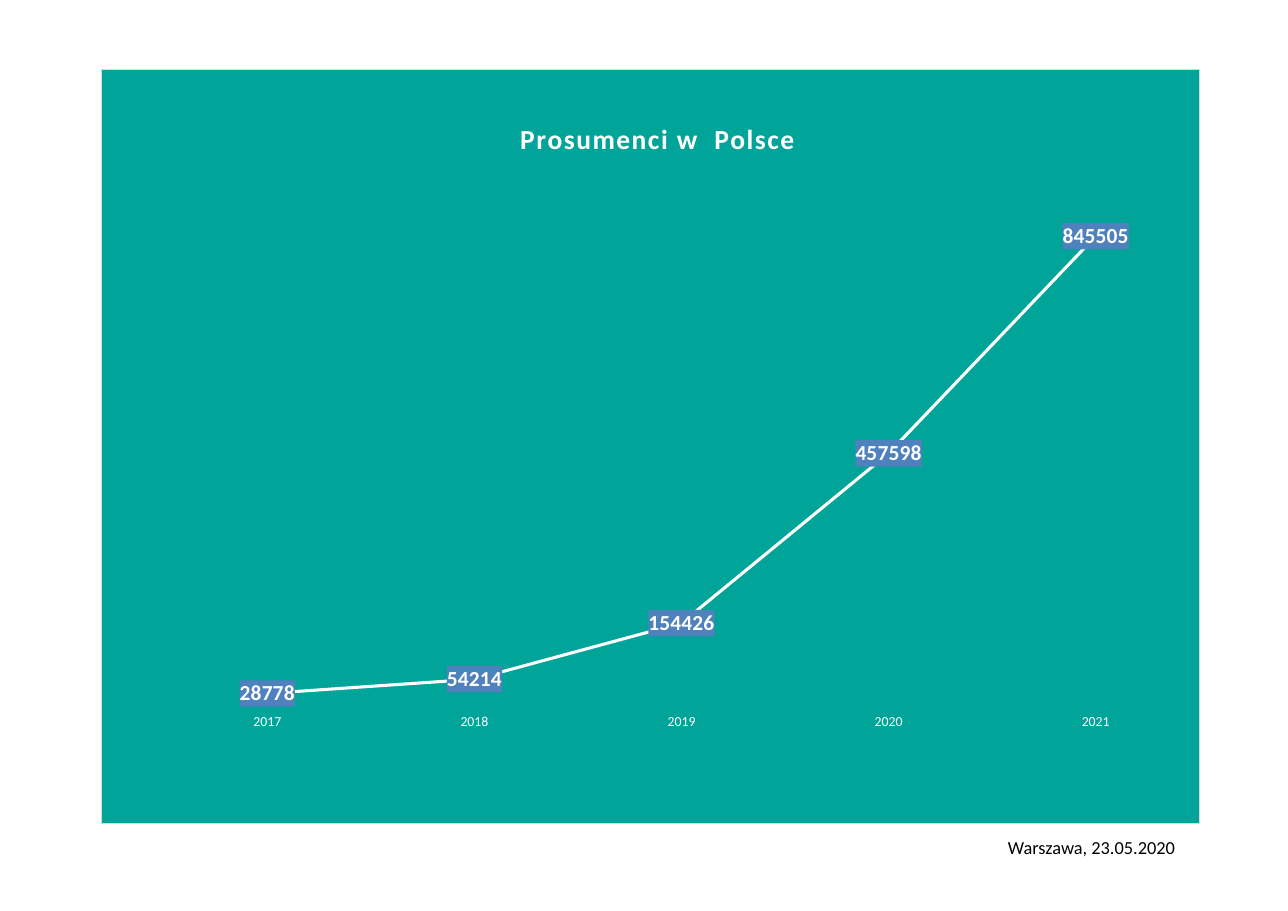
import dataclasses

import pptx
import pptx.chart.data
import pptx.dml.color
import pptx.enum.chart
import pptx.enum.text
import pptx.oxml
import pptx.oxml.ns
import pptx.util

Cm = pptx.util.Cm
Pt = pptx.util.Pt
RGB = pptx.dml.color.RGBColor

WHITE = RGB(0xFF, 0xFF, 0xFF)
BLACK = RGB(0, 0, 0)
TEAL = RGB(0x00, 0xA4, 0x99)
BLUE = RGB(0x4F, 0x81, 0xBD)
GREY = RGB(0xD9, 0xD9, 0xD9)
FACE = "Calibri"


@dataclasses.dataclass(frozen=True)
class Count:
    year: str
    total: int


COUNTS = [
    Count("2017", 28778),
    Count("2018", 54214),
    Count("2019", 154426),
    Count("2020", 457598),
    Count("2021", 845505),
]


def style(font, size: float, color: RGB, bold: bool = False) -> None:
    font.name = FACE
    font.size = Pt(size)
    font.bold = bold
    font.color.rgb = color


def fill(color: RGB, edge: str = "<a:ln><a:noFill/></a:ln>"):
    names = pptx.oxml.ns.nsdecls("c", "a")
    return pptx.oxml.parse_xml(
        f'<c:spPr {names}><a:solidFill><a:srgbClr val="{color}"/>'
        f"</a:solidFill>{edge}</c:spPr>"
    )


def place(target: str = "", **spots: float):
    names = pptx.oxml.ns.nsdecls("c")
    modes = "".join(f'<c:{key}Mode val="edge"/>' for key in "xy")
    sizes = "".join(f'<c:{key} val="{val}"/>' for key, val in spots.items())
    return pptx.oxml.parse_xml(
        f"<c:layout {names}><c:manualLayout>{target}{modes}{sizes}"
        "</c:manualLayout></c:layout>"
    )


def add_title(chart) -> None:
    frame = chart.chart_title.text_frame
    frame.text = "Prosumenci w  Polsce"
    style(frame.paragraphs[0].font, 18, WHITE, True)
    root = chart.element
    root.xpath("c:chart/c:title//a:defRPr")[0].set("spc", "100")
    title = root.xpath("c:chart/c:title")[0]
    for old in title.xpath("c:layout"):
        title.remove(old)
    title.xpath("c:tx")[0].addnext(place(x=0.377, y=0.06))


def add_line(chart) -> None:
    line = chart.plots[0].series[0]
    line.smooth = False
    line.format.line.color.rgb = WHITE
    line.format.line.width = Pt(2)
    line.marker.style = pptx.enum.chart.XL_MARKER_STYLE.NONE
    labels = line.data_labels
    labels.show_value = True
    labels.position = pptx.enum.chart.XL_LABEL_POSITION.CENTER
    style(labels.font, 14, WHITE, True)
    chart.element.xpath(".//c:ser/c:dLbls/c:txPr")[0].addprevious(fill(BLUE))


def set_axes(chart) -> None:
    years = chart.category_axis
    years.major_tick_mark = pptx.enum.chart.XL_TICK_MARK.NONE
    years.has_major_gridlines = False
    years.format.line.fill.background()
    style(years.tick_labels.font, 9, WHITE)
    scale = chart.value_axis
    scale.minimum_scale = 0
    scale.maximum_scale = 900000
    scale.has_major_gridlines = False
    scale.visible = False


def add_chart(slide) -> None:
    data = pptx.chart.data.CategoryChartData()
    data.categories = [count.year for count in COUNTS]
    data.add_series("Prosumenci", [count.total for count in COUNTS])
    chart = slide.shapes.add_chart(
        pptx.enum.chart.XL_CHART_TYPE.LINE,
        Cm(2.32), Cm(1.58), Cm(25.35), Cm(17.42), data,
    ).chart
    chart.has_legend = False
    chart.plots[0].vary_by_categories = False
    style(chart.font, 10, BLACK)
    add_title(chart)
    add_line(chart)
    set_axes(chart)
    root = chart.element
    edge = (
        f'<a:ln w="{Pt(0.75)}"><a:solidFill><a:srgbClr val="{GREY}"/>'
        "</a:solidFill></a:ln>"
    )
    root.xpath("c:chart")[0].addnext(fill(TEAL, edge))
    area = root.xpath("c:chart/c:plotArea")[0]
    for old in area.xpath("c:layout"):
        area.remove(old)
    inner = '<c:layoutTarget val="inner"/>'
    area.insert(0, place(inner, x=0.057, y=0.181, w=0.943, h=0.668))


def add_date(slide) -> None:
    box = slide.shapes.add_textbox(Cm(20.42), Cm(18.97), Cm(6.68), Cm(1.12))
    frame = box.text_frame
    frame.word_wrap = True
    frame.margin_left = frame.margin_right = 0
    frame.margin_top = frame.margin_bottom = 0
    frame.vertical_anchor = pptx.enum.text.MSO_ANCHOR.MIDDLE
    frame.text = "Warszawa, 23.05.2020"
    para = frame.paragraphs[0]
    para.alignment = pptx.enum.text.PP_ALIGN.RIGHT
    style(para.font, 12, BLACK)


def main() -> None:
    deck = pptx.Presentation()
    deck.slide_width = Cm(29.7)
    deck.slide_height = Cm(21)
    slide = deck.slides.add_slide(deck.slide_layouts[6])
    add_date(slide)
    add_chart(slide)
    deck.save("out.pptx")


if __name__ == "__main__":
    main()
